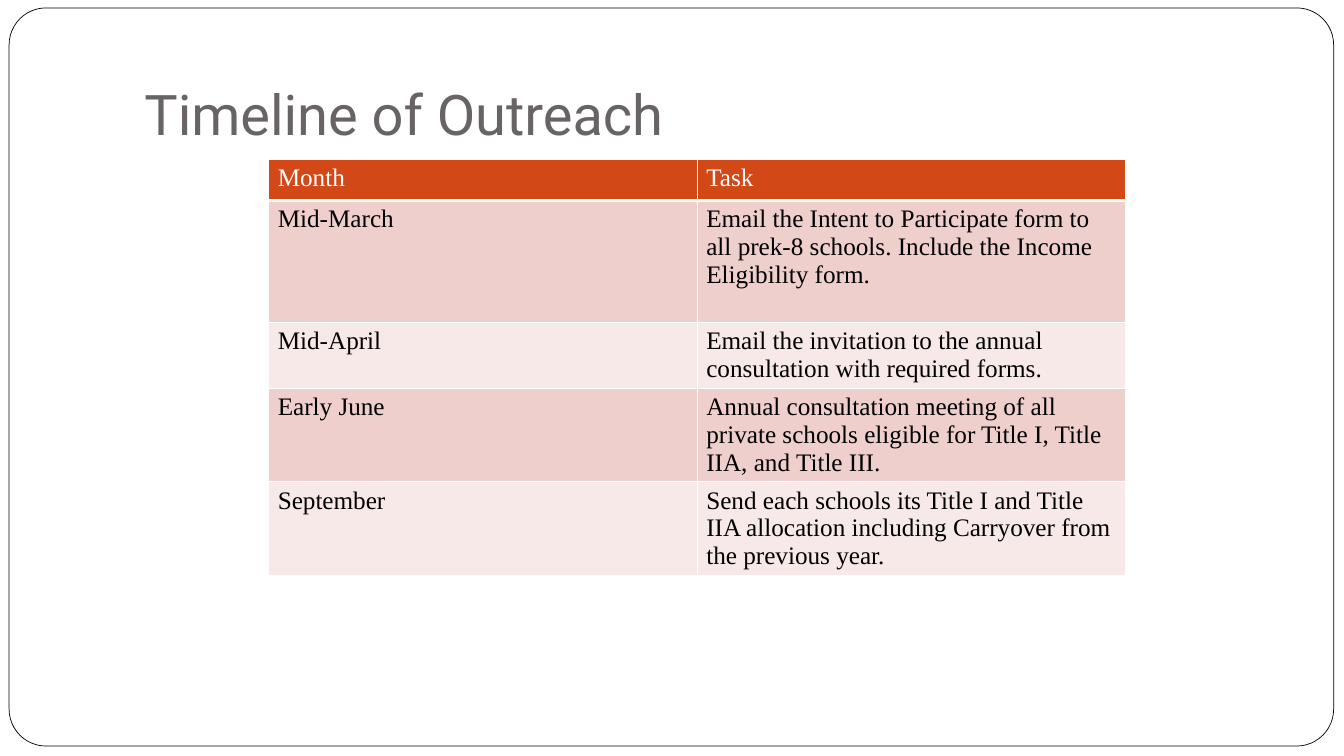
from dataclasses import dataclass

import pptx
import pptx.dml.color
import pptx.enum.shapes
import pptx.enum.text
import pptx.oxml
import pptx.oxml.ns
import pptx.util
from pptx.util import Cm


@dataclass(frozen=True)
class Theme:
    title_font: str = "Roboto"
    body_font: str = "Times New Roman"
    title_size: int = 40
    body_size: int = 18
    title: str = "696464"
    text: str = "000000"
    paper: str = "FFFFFF"
    header: str = "D34817"
    bands: tuple = ("EFCFCC", "F7E9E8")


THEME = Theme()

# Row height in cm, month, task
TIMELINE = [
    (1.03, "Month", "Task"),
    (3.07, "Mid-March", "Email the Intent to Participate form to all prek-8 schools. "
                        "Include the Income Eligibility form."),
    (1.66, "Mid-April", "Email the invitation to the annual consultation with required forms."),
    (2.36, "Early June", "Annual consultation meeting of all private schools eligible "
                         "for Title I, Title IIA, and Title III."),
    (2.36, "September", "Send each schools its Title I and Title IIA allocation "
                        "including Carryover from the previous year."),
]


def rgb(value):
    return pptx.dml.color.RGBColor.from_string(value)


def add_run(p, text, font, size, color):
    r = p.add_run()
    r.text = text
    r.font.name = font
    r.font.size = pptx.util.Pt(size)
    r.font.color.rgb = rgb(color)


def add_frame(s, left, top, width, height):
    """Draw the rounded page border behind everything else."""
    sp = s.shapes.add_shape(pptx.enum.shapes.MSO_SHAPE.ROUNDED_RECTANGLE,
                            left, top, width, height)
    sp.adjustments[0] = 0.05
    sp.shadow.inherit = False
    sp.fill.solid()
    sp.fill.fore_color.rgb = rgb(THEME.paper)
    sp.line.color.rgb = rgb(THEME.text)
    sp.line.width = pptx.util.Pt(0.5)
    s.shapes.element.insert(2, sp.element)


def add_title(s, text, left, top, width, height):
    sp = s.shapes.title
    sp.left, sp.top, sp.width, sp.height = left, top, width, height
    tf = sp.text_frame
    tf.word_wrap = True
    tf.auto_size = pptx.enum.text.MSO_AUTO_SIZE.NONE
    tf.vertical_anchor = pptx.enum.text.MSO_ANCHOR.BOTTOM
    tf.margin_left = tf.margin_right = tf.margin_bottom = Cm(0.25)
    tf.margin_top = Cm(0.13)
    p = tf.paragraphs[0]
    p.alignment = pptx.enum.text.PP_ALIGN.LEFT
    add_run(p, text, THEME.title_font, THEME.title_size, THEME.title)


def set_borders(cell, bottom_width):
    tc_pr = cell._tc.get_or_add_tcPr()
    widths = {"lnL": 1, "lnR": 1, "lnT": 1, "lnB": bottom_width}
    for i, (side, width) in enumerate(widths.items()):
        tc_pr.insert(i, pptx.oxml.parse_xml(
            f'<a:{side} {pptx.oxml.ns.nsdecls("a")} w="{pptx.util.Pt(width)}">'
            f'<a:solidFill><a:srgbClr val="{THEME.paper}"/></a:solidFill></a:{side}>'))


def add_timeline(s, rows, left, top, width):
    height = Cm(sum(row[0] for row in rows))
    table = s.shapes.add_table(len(rows), 2, left, top, width, height).table
    for i, (row_height, *texts) in enumerate(rows):
        table.rows[i].height = Cm(row_height)
        is_header = i == 0
        fill = THEME.header if is_header else THEME.bands[(i - 1) % 2]
        color = THEME.paper if is_header else THEME.text
        for cell, text in zip(table.rows[i].cells, texts):
            cell.fill.solid()
            cell.fill.fore_color.rgb = rgb(fill)
            cell.margin_left = cell.margin_right = Cm(0.23)
            cell.margin_top = cell.margin_bottom = Cm(0.12)
            set_borders(cell, 3 if is_header else 1)
            p = cell.text_frame.paragraphs[0]
            add_run(p, text, THEME.body_font, THEME.body_size, color)
            p.runs[0].font.bold = False


def main():
    prs = pptx.Presentation()
    prs.slide_width, prs.slide_height = Cm(33.87), Cm(19.05)
    s = prs.slides.add_slide(prs.slide_layouts[5])
    add_frame(s, Cm(0.23), Cm(0.2), Cm(33.38), Cm(18.6))
    add_title(s, "Timeline of Outreach", Cm(3.39), Cm(0.76), Cm(28.78), Cm(3.18))
    add_timeline(s, TIMELINE, Cm(6.77), Cm(4.02), Cm(21.6))
    prs.save("out.pptx")


if __name__ == "__main__":
    main()
